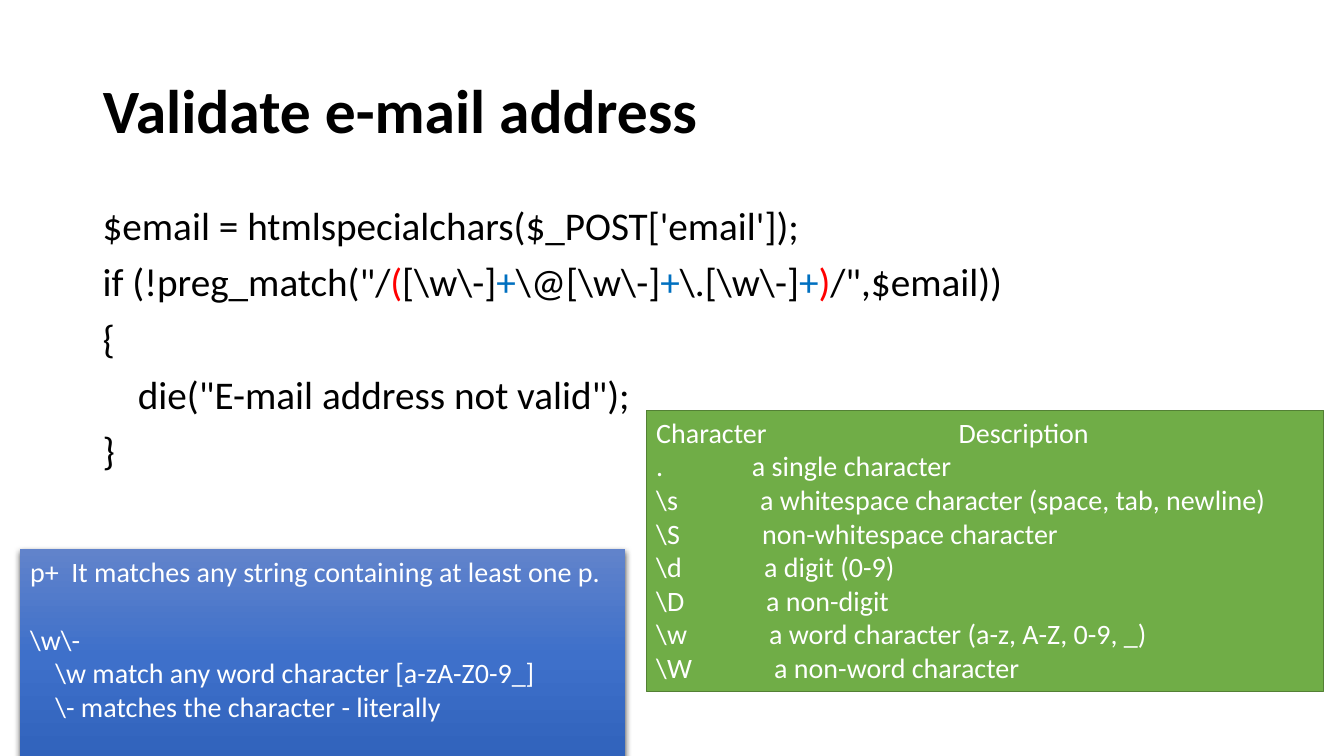
from lxml.etree import SubElement
from pptx import Presentation
from pptx.dml.color import RGBColor
from pptx.enum.shapes import MSO_SHAPE
from pptx.enum.text import MSO_ANCHOR, MSO_AUTO_SIZE, PP_ALIGN
from pptx.oxml import parse_xml
from pptx.oxml.ns import nsdecls, qn
from pptx.util import Inches, Pt

FONT = "Calibri"
BLACK, WHITE, RED, BLUE = "000000", "FFFFFF", "FF0000", "0070C0"

TITLE = "Validate e-mail address"
# Each code line: left indent in inches, then its (text, colour) runs
CODE = [
    (0, [("$email = htmlspecialchars($_POST['email']);", BLACK)]),
    (0, [("if (!preg_match(\"/", BLACK), ("(", RED), (r"[\w\-]", BLACK), ("+", BLUE),
         (r"\@[\w\-]", BLACK), ("+", BLUE), (r"\.[\w\-]", BLACK), ("+", BLUE),
         (")", RED), ("/\",$email))", BLACK)]),
    (0, [("{", BLACK)]),
    (0.35, [("die(\"E-mail address not valid\");", BLACK)]),
    (0, [("}", BLACK)]),
]
# Character, description, tab distance in inches
CHARACTERS = [
    ("Character", "Description", 3),
    (".", "a single character", 0.95),
    (r"\s", "a whitespace character (space, tab, newline)", 1.03),
    (r"\S", "non-whitespace character", 1.05),
    (r"\d", "a digit (0-9)", 1.07),
    (r"\D", "a non-digit", 1.09),
    (r"\w", "a word character (a-z, A-Z, 0-9, _)", 1.12),
    (r"\W", "a non-word character", 1.17),
]
# Text, left indent and tab distance in inches, space before in points
NOTES = [
    ("p+\tIt matches any string containing at least one p.", 0, 0.41, 0),
    (r"\w\-", 0, None, 24.4),
    (r"\w match any word character [a-zA-Z0-9_]", 0.25, None, 0),
    (r"\- matches the character - literally", 0.25, None, 0),
]
NOTE_GRADIENT = [(0, "6183CB"), (50, "3E70CA"), (100, "3062BB")]


def rgb(color):
    return RGBColor.from_string(color)


def add_paragraph(frame, runs, size, indent=0, tab=None, before=0, spacing=1):
    """Fill the frame's first paragraph if it is empty, else append one."""
    first = frame.paragraphs[0]
    paragraph = first if not first.runs else frame.add_paragraph()
    paragraph.alignment = PP_ALIGN.LEFT
    paragraph.line_spacing = spacing
    paragraph.space_before = Pt(before)
    properties = paragraph._p.get_or_add_pPr()
    properties.set("marL", str(Inches(indent)))
    properties.set("indent", "0")
    if tab:
        properties.set("defTabSz", str(Inches(tab)))
    paragraph.font.name = FONT
    paragraph.font.size = Pt(size)
    for text, color in runs:
        run = paragraph.add_run()
        run.text = text
        run.font.color.rgb = rgb(color)


def add_box(slide, left, top, width, height):
    box = slide.shapes.add_shape(MSO_SHAPE.RECTANGLE, Inches(left), Inches(top),
                                 Inches(width), Inches(height))
    box.shadow.inherit = False
    box.text_frame.word_wrap = True
    box.text_frame.vertical_anchor = MSO_ANCHOR.TOP
    return box


def add_gradient_and_shadow(shape, stops):
    shape.fill.gradient()
    shape.fill.gradient_angle = 270
    stop_list = shape._element.spPr.find(qn("a:gradFill")).find(qn("a:gsLst"))
    for old_stop in list(stop_list):
        stop_list.remove(old_stop)
    for percent, color in stops:
        stop = SubElement(stop_list, qn("a:gs"), pos=str(percent * 1000))
        SubElement(stop, qn("a:srgbClr"), val=color)
    shape._element.spPr.find(qn("a:effectLst")).append(parse_xml(
        f'<a:outerShdw {nsdecls("a")} blurRad="{Pt(4.5)}" dist="{Pt(1.5)}" dir="5400000" '
        'algn="ctr" rotWithShape="0"><a:srgbClr val="000000"><a:alpha val="63000"/>'
        '</a:srgbClr></a:outerShdw>'))


presentation = Presentation()
presentation.slide_width, presentation.slide_height = Inches(13.33), Inches(7.5)
slide = presentation.slides.add_slide(presentation.slide_layouts[5])

title = slide.shapes.title
title.left, title.top = Inches(0.92), Inches(0.4)
title.width, title.height = Inches(11.5), Inches(1.45)
title.text_frame.vertical_anchor = MSO_ANCHOR.MIDDLE
title.text_frame.auto_size = MSO_AUTO_SIZE.NONE
add_paragraph(title.text_frame, [(TITLE, BLACK)], 44, spacing=0.9)
title.text_frame.paragraphs[0].font.bold = True

code = slide.shapes.add_textbox(Inches(0.92), Inches(2), Inches(11.5), Inches(4.76))
code.text_frame.word_wrap = True
for indent, runs in CODE:
    add_paragraph(code.text_frame, runs, 28, indent, before=10, spacing=0.9)

character_box = add_box(slide, 6.41, 4.07, 6.72, 2.79)
character_box.fill.solid()
character_box.fill.fore_color.rgb = rgb("70AD47")
character_box.line.color.rgb = rgb("538035")
character_box.line.width = Pt(1)
for character, description, tab in CHARACTERS:
    add_paragraph(character_box.text_frame, [(f"{character}\t{description}", WHITE)], 20, tab=tab)

note_box = add_box(slide, 0.2, 5.45, 6, 2.12)
note_box.line.fill.background()
add_gradient_and_shadow(note_box, NOTE_GRADIENT)
for text, indent, tab, before in NOTES:
    add_paragraph(note_box.text_frame, [(text, WHITE)], 20, indent, tab, before)

presentation.save("out.pptx")
